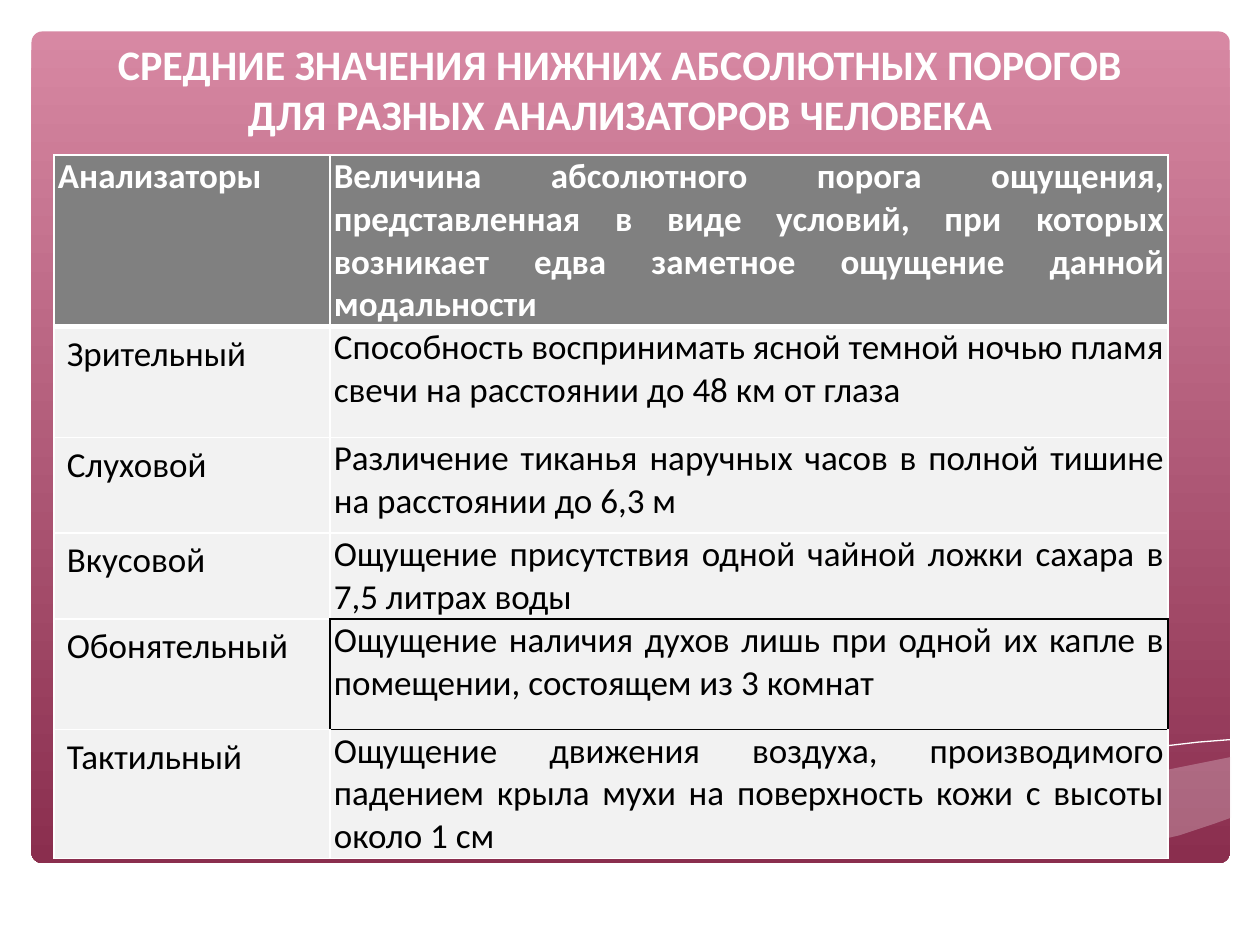
"""Build a slide with a table of lower absolute thresholds of the human senses."""
from lxml import etree
from pptx import Presentation
from pptx.dml.color import RGBColor
from pptx.enum.shapes import MSO_SHAPE
from pptx.enum.text import MSO_ANCHOR, MSO_AUTO_SIZE, PP_ALIGN
from pptx.oxml.ns import qn
from pptx.util import Inches, Pt

ROUNDED = MSO_SHAPE.ROUNDED_RECTANGLE
MIDDLE = MSO_ANCHOR.MIDDLE
NO_AUTOFIT = MSO_AUTO_SIZE.NONE
LEFT, CENTER, JUSTIFY = PP_ALIGN.LEFT, PP_ALIGN.CENTER, PP_ALIGN.JUSTIFY

WHITE = RGBColor(0xFF, 0xFF, 0xFF)
BLACK = RGBColor(0, 0, 0)
PINK = RGBColor(0xD7, 0x88, 0xA3)
WINE = RGBColor(0x8A, 0x2E, 0x4E)
MIST = RGBColor(0xF4, 0xE7, 0xED)
HEADER_GRAY = RGBColor(0x80, 0x80, 0x80)
BODY_GRAY = RGBColor(0xF2, 0xF2, 0xF2)

TITLE = "СРЕДНИЕ ЗНАЧЕНИЯ НИЖНИХ АБСОЛЮТНЫХ ПОРОГОВ ДЛЯ РАЗНЫХ АНАЛИЗАТОРОВ ЧЕЛОВЕКА"
THRESHOLDS = [
    ("Анализаторы", "Величина абсолютного порога ощущения, представленная в виде условий, "
     "при которых возникает едва заметное ощущение данной модальности"),
    ("Зрительный", "Способность воспринимать ясной темной ночью пламя свечи "
     "на расстоянии до 48 км от глаза"),
    ("Слуховой", "Различение тиканья наручных часов в полной тишине на расстоянии до 6,3 м"),
    ("Вкусовой", "Ощущение присутствия одной чайной ложки сахара в 7,5 литрах воды"),
    ("Обонятельный", "Ощущение наличия духов лишь при одной их капле в помещении, "
     "состоящем из 3 комнат"),
    ("Тактильный", "Ощущение движения воздуха, производимого падением крыла мухи "
     "на поверхность кожи с высоты около 1 см"),
]
COLUMN_WIDTHS = [2.19, 6.65]
ROW_HEIGHTS = [1.14, 0.88, 0.76, 0.5, 0.88, 0.76]
OUTLINED_CELL = (4, 1)

WAVES = [
    (29, [(9.76, 6.01), (9.36, 6.09), (8.92, 6.18), (8.33, 6.32), (7.54, 6.5), (7.07, 6.59),
          (6.62, 6.67), (7.06, 6.73), (7.45, 6.76), (7.93, 6.79), (8.35, 6.79), (8.73, 6.76),
          (9.06, 6.7), (9.36, 6.63), (9.63, 6.54), (9.77, 6.49), (9.77, 6.01)]),
    (40, [(8.94, 6.74), (8.38, 6.67), (7.76, 6.56), (7.07, 6.42), (6.3, 6.23), (5.69, 6.1),
          (5.15, 6), (4.65, 5.93), (4.2, 5.89), (3.8, 5.88), (3.28, 5.89), (2.87, 5.93),
          (3.43, 6.01), (4.05, 6.13), (4.5, 6.23), (5.3, 6.42), (6.02, 6.57), (6.66, 6.68),
          (7.23, 6.75), (7.74, 6.79), (8.18, 6.8), (8.58, 6.78), (8.94, 6.74)]),
]
CURVES = [
    [(3.1, 5.97), (3.44, 5.92), (3.88, 5.89), (4.5, 5.89), (5.1, 5.94), (5.82, 6.02),
     (6.36, 6.1), (6.96, 6.21), (7.61, 6.35), (8.32, 6.52), (9.08, 6.73)],
    [(6.14, 6.58), (6.53, 6.48), (6.96, 6.37), (7.48, 6.24), (8.07, 6.12), (8.67, 6),
     (8.96, 5.96), (9.25, 5.92), (9.51, 5.89), (9.76, 5.87)],
]


def draw_outline(shapes, points, close):
    corners = [(Inches(x), Inches(y)) for x, y in points]
    builder = shapes.build_freeform(*corners[0])
    builder.add_line_segments(corners[1:], close=close)
    outline = builder.convert_to_shape()
    outline.shadow.inherit = False
    return outline


def add_border(cell, side, color, points):
    border = etree.SubElement(cell._tc.get_or_add_tcPr(), qn(f"a:ln{side}"), w=str(Pt(points)))
    fill = etree.SubElement(border, qn("a:solidFill"))
    etree.SubElement(fill, qn("a:srgbClr"), val=str(color))


prs = Presentation()
prs.slide_width, prs.slide_height = Inches(10), Inches(7.5)
slide = prs.slides.add_slide(prs.slide_layouts[5])
shapes = slide.shapes

panel = shapes.add_shape(ROUNDED, Inches(0.25), Inches(0.25), Inches(9.51), Inches(6.6))
panel.adjustments[0] = 0.013
panel.shadow.inherit = False
panel.line.fill.background()
panel.fill.gradient()
panel.fill.gradient_angle = 270
for stop, color, position in zip(panel.fill.gradient_stops, (PINK, WINE), (0, 1)):
    stop.color.rgb = color
    stop.position = position

for opacity, points in WAVES:
    wave = draw_outline(shapes, points, True)
    wave.line.fill.background()
    wave.fill.solid()
    wave.fill.fore_color.rgb = MIST
    tint = wave.fill._xPr.find(".//" + qn("a:srgbClr"))
    etree.SubElement(tint, qn("a:alpha"), val=str(opacity * 1000))

for points in CURVES:
    curve = draw_outline(shapes, points, False)
    curve.fill.background()
    curve.line.color.rgb = WHITE
    curve.line.width = Pt(0.75)

title = shapes.title
shapes._spTree.append(title._element)
title_place = {"left": 0.67, "top": 0.29, "width": 8.5, "height": 0.83}
for name, value in title_place.items():
    setattr(title, name, Inches(value))
title.text_frame.auto_size = NO_AUTOFIT
title.text_frame.vertical_anchor = MIDDLE
title.text_frame.text = TITLE
title_paragraph = title.text_frame.paragraphs[0]
title_paragraph.alignment = CENTER
title_font = title_paragraph.runs[0].font
for name, value in {"size": Pt(24), "name": "Calibri", "bold": True}.items():
    setattr(title_font, name, value)
title_font.color.rgb = WHITE

table = shapes.add_table(len(ROW_HEIGHTS), len(COLUMN_WIDTHS), Inches(0.43), Inches(1.23),
                         Inches(sum(COLUMN_WIDTHS)), Inches(sum(ROW_HEIGHTS))).table
for column, width in zip(table.columns, COLUMN_WIDTHS):
    column.width = Inches(width)
for row, height in zip(table.rows, ROW_HEIGHTS):
    row.height = Inches(height)

for r, texts in enumerate(THRESHOLDS):
    for c, text in enumerate(texts):
        cell = table.cell(r, c)
        is_header = r == 0
        is_tight = is_header or c == 1
        neighbours = {"L": (r, c - 1), "R": (r, c + 1), "T": (r - 1, c), "B": (r + 1, c)}
        for side, neighbour in neighbours.items():
            border_color = BLACK if OUTLINED_CELL in ((r, c), neighbour) else WHITE
            under_header = (r, side) in ((0, "B"), (1, "T"))
            add_border(cell, side, border_color, 3 if under_header else 1)
        cell.fill.solid()
        cell.fill.fore_color.rgb = HEADER_GRAY if is_header else BODY_GRAY
        margin_x, margin_y = (0.03, 0) if is_tight else (0.1, 0.05)
        cell.margin_left = cell.margin_right = Inches(margin_x)
        cell.margin_top = cell.margin_bottom = Inches(margin_y)
        cell.text = text
        paragraph = cell.text_frame.paragraphs[0]
        paragraph.alignment = JUSTIFY if is_tight else LEFT
        font = paragraph.runs[0].font
        for name, value in {"size": Pt(20), "name": "Calibri", "bold": is_header}.items():
            setattr(font, name, value)
        font.color.rgb = WHITE if is_header else BLACK

prs.save("out.pptx")
